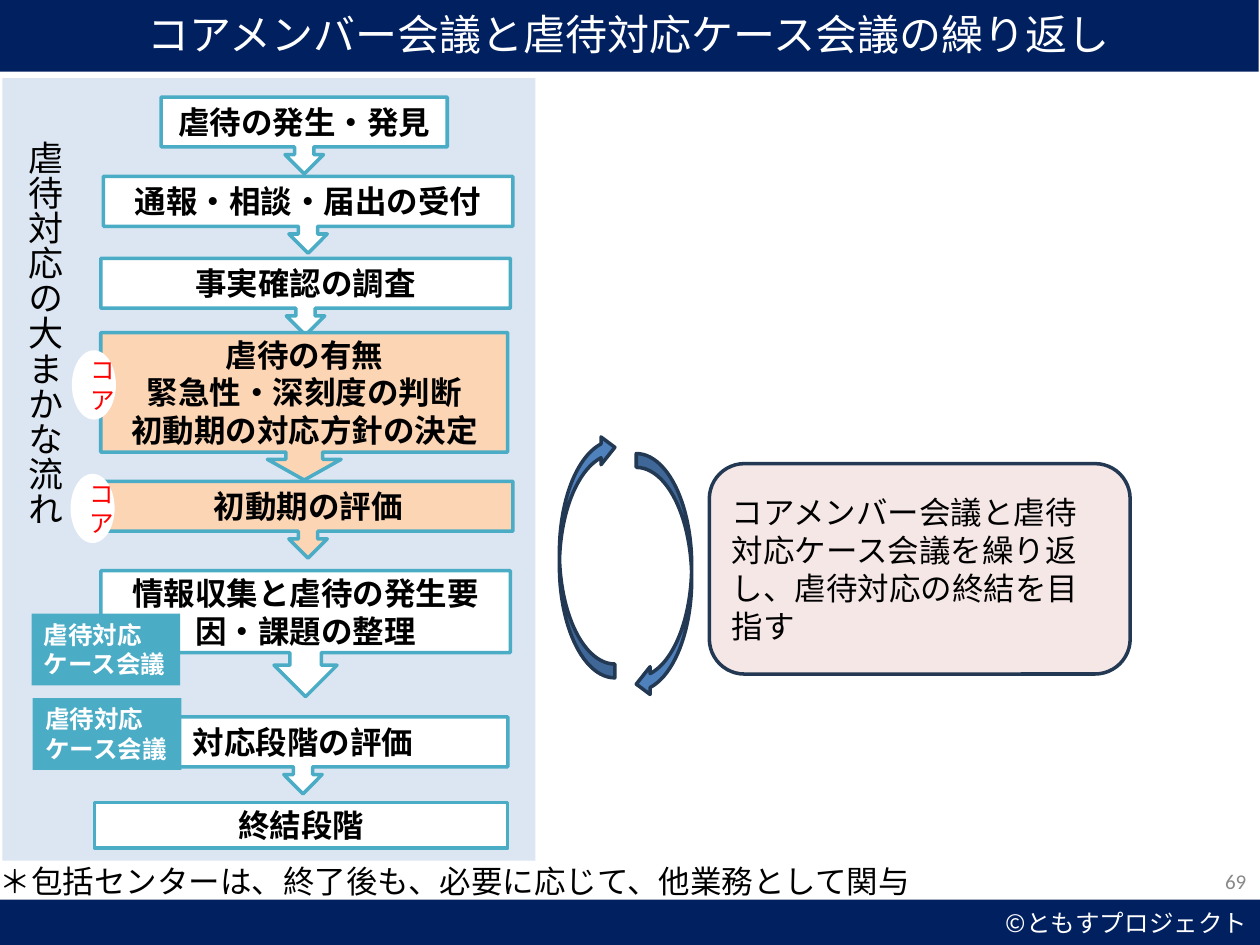
from dataclasses import dataclass
from typing import Optional

from lxml import etree
from pptx import Presentation
from pptx.dml.color import RGBColor
from pptx.enum.shapes import MSO_SHAPE as Preset
from pptx.enum.text import MSO_ANCHOR as Anchor, PP_ALIGN as Align
from pptx.oxml.ns import qn
from pptx.util import Inches, Pt

JAPANESE = "Noto Sans CJK JP"
NAVY, TEAL, PEACH, INK = "002060", "4BACC6", "FCD5B5", "233953"
WHITE, BLACK, RED = "FFFFFF", "000000", "FF0000"


@dataclass
class Box:
    left: float
    top: float
    width: float
    height: float


@dataclass
class TextStyle:
    size: float
    color: str = BLACK
    bold: bool = False
    align: Align = Align.LEFT
    anchor: Anchor = Anchor.MIDDLE
    font: str = JAPANESE


@dataclass
class Step:
    box: Box
    text: str
    fill: str = WHITE
    preset: Preset = Preset.DOWN_ARROW_CALLOUT
    adjustments: tuple = ()


STEP_STYLE = TextStyle(18, bold=True, align=Align.CENTER)
CORE_STYLE = TextStyle(14, RED, align=Align.CENTER)
CASE_STYLE = TextStyle(14, WHITE, bold=True, anchor=Anchor.TOP)


def rgb(color: str) -> RGBColor:
    return RGBColor.from_string(color)


def place(box: Box) -> tuple:
    return tuple(Inches(n) for n in (box.left, box.top, box.width, box.height))


def write(shape, text: str, style: TextStyle) -> None:
    """Write one paragraph for each line of text."""
    frame = shape.text_frame
    frame.word_wrap = True
    frame.vertical_anchor = style.anchor
    for index, line in enumerate(text.split("\n")):
        paragraph = frame.add_paragraph() if index else frame.paragraphs[0]
        paragraph.alignment = style.align
        run = paragraph.add_run()
        run.text = line
        font = run.font
        font.size, font.bold, font.name = Pt(style.size), style.bold, style.font
        font.color.rgb = rgb(style.color)
        etree.SubElement(run._r.get_or_add_rPr(), qn("a:ea"), typeface=style.font)


def draw_shape(slide, preset: Preset, box: Box, fill: str,
               line: Optional[str] = None, text: str = "",
               style: Optional[TextStyle] = None):
    shape = slide.shapes.add_shape(preset, *place(box))
    shape.shadow.inherit = False
    shape.fill.solid()
    shape.fill.fore_color.rgb = rgb(fill)
    if line:
        shape.line.color.rgb = rgb(line)
        shape.line.width = Pt(2)
    else:
        shape.line.fill.background()
    if style:
        write(shape, text, style)
    return shape


def draw_text(slide, box: Box, text: str, style: TextStyle):
    shape = slide.shapes.add_textbox(*place(box))
    write(shape, text, style)
    return shape


def draw_step(slide, step: Step) -> None:
    shape = draw_shape(slide, step.preset, step.box, step.fill, TEAL,
                       step.text, STEP_STYLE)
    for index, value in enumerate(step.adjustments):
        shape.adjustments[index] = value


def draw_core_mark(slide, left: float, top: float) -> None:
    draw_shape(slide, Preset.OVAL, Box(left, top, 0.35, 0.55), WHITE,
               text="コア", style=CORE_STYLE)


def draw_case_mark(slide, left: float, top: float) -> None:
    draw_shape(slide, Preset.RECTANGLE, Box(left, top, 1.18, 0.57), TEAL,
               text="虐待対応ケース会議", style=CASE_STYLE)


def draw_cycle_arrow(slide, left: float, top: float, rotation: float) -> None:
    arrow = draw_shape(slide, Preset.CURVED_LEFT_ARROW,
                       Box(left, top, 0.44, 1.94), "4F81BD", INK)
    arrow.rotation = rotation


STEPS = [
    Step(Box(1.28, 0.77, 2.27, 0.61), "虐待の発生・発見"),
    Step(Box(0.8, 2.05, 3.25, 0.61), "事実確認の調査"),
    Step(Box(0.8, 4.53, 3.25, 1), "情報収集と虐待の発生要因・課題の整理"),
    Step(Box(0.78, 5.69, 3.25, 0.61), "対応段階の評価"),
    Step(Box(0.82, 3.82, 3.25, 0.61), "初動期の評価", PEACH),
    Step(Box(0.82, 1.4, 3.25, 0.61), "通報・相談・届出の受付"),
]
DECISION = Step(Box(0.8, 2.64, 3.23, 1.17),
                "虐待の有無\n緊急性・深刻度の判断\n初動期の対応方針の決定",
                PEACH, adjustments=(0.25, 0.25, 0.14, 0.81))
CLOSING = Step(Box(0.75, 6.37, 3.28, 0.36), "終結段階", preset=Preset.RECTANGLE)


def main() -> None:
    presentation = Presentation()
    presentation.slide_width, presentation.slide_height = Inches(10), Inches(7.5)
    slide = presentation.slides.add_slide(presentation.slide_layouts[6])

    # Footer band and footnote
    draw_shape(slide, Preset.RECTANGLE, Box(0, 7.14, 10, 0.36), NAVY,
               text="©ともすプロジェクト",
               style=TextStyle(14, WHITE, align=Align.RIGHT))
    draw_text(slide, Box(-0.1, 6.79, 10.45, 0.4),
              "＊包括センターは、終了後も、必要に応じて、他業務として関与",
              TextStyle(18, anchor=Anchor.TOP))

    # Message about the cycle
    message = draw_shape(
        slide, Preset.ROUNDED_RECTANGLE, Box(5.63, 3.68, 3.34, 1.67), "E6B9B8", INK,
        "コアメンバー会議と虐待対応ケース会議を繰り返し、虐待対応の終結を目指す",
        TextStyle(18))
    fill_color = message._element.spPr.find(qn("a:solidFill"))[0]
    etree.SubElement(fill_color, qn("a:alpha"), val="33000")

    # Flow panel with its steps and vertical heading
    draw_shape(slide, Preset.RECTANGLE, Box(0.02, 0.62, 4.23, 6.21), "DCE6F2")
    for step in STEPS:
        draw_step(slide, step)
    heading = draw_text(slide, Box(0.03, 1.02, 0.54, 5.57), "虐待対応の大まかな流れ",
                        TextStyle(20, anchor=Anchor.TOP))
    heading.text_frame._txBody.bodyPr.set("vert", "eaVert")

    # Meeting marks, which overlap the steps
    draw_core_mark(slide, 0.56, 3.76)
    draw_case_mark(slide, 0.25, 4.87)
    draw_step(slide, DECISION)
    draw_core_mark(slide, 0.57, 2.78)
    draw_case_mark(slide, 0.26, 5.54)
    draw_step(slide, CLOSING)

    # Title band
    draw_shape(slide, Preset.RECTANGLE, Box(-0.01, -0.03, 10, 0.6), NAVY,
               text="コアメンバー会議と虐待対応ケース会議の繰り返し",
               style=TextStyle(24, WHITE, align=Align.CENTER))

    # Cycle arrows and page number
    draw_cycle_arrow(slide, 5.05, 3.6, 0)
    draw_cycle_arrow(slide, 4.44, 3.44, 180)
    draw_text(slide, Box(7.66, 6.79, 2.33, 0.4), "69",
              TextStyle(12, "898989", align=Align.RIGHT, font="Calibri"))

    presentation.save("out.pptx")


if __name__ == "__main__":
    main()
